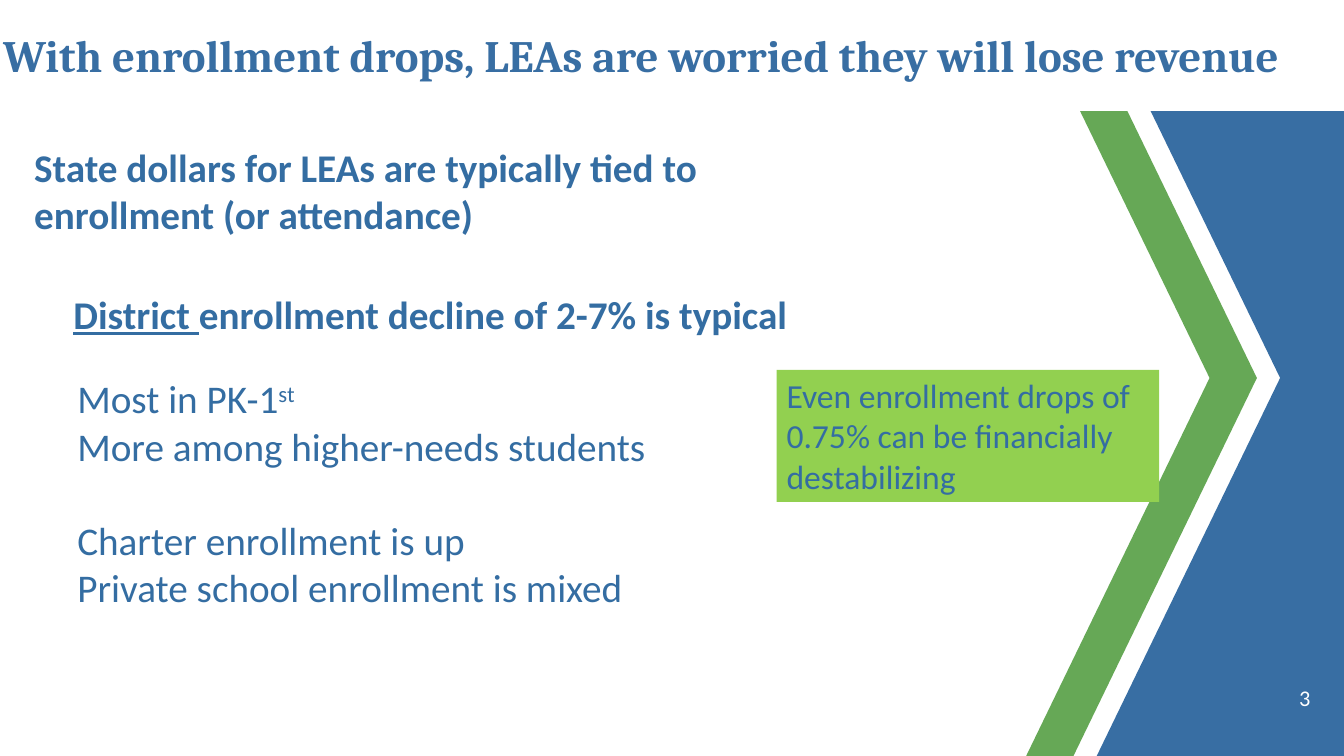
from lxml import etree
from pptx import Presentation
from pptx.dml.color import RGBColor
from pptx.enum.shapes import MSO_SHAPE
from pptx.enum.text import MSO_ANCHOR, MSO_AUTO_SIZE, PP_ALIGN
from pptx.oxml.ns import qn
from pptx.util import Pt

RECTANGLE = MSO_SHAPE.RECTANGLE
TOP, MIDDLE, BOTTOM = MSO_ANCHOR.TOP, MSO_ANCHOR.MIDDLE, MSO_ANCHOR.BOTTOM
LEFT, RIGHT = PP_ALIGN.LEFT, PP_ALIGN.RIGHT
NO_FIT = MSO_AUTO_SIZE.NONE
WHITE = RGBColor(0xFF, 0xFF, 0xFF)
GREEN = RGBColor(0x56, 0x9F, 0x44)
BLUE = RGBColor(0x38, 0x6E, 0xA3)
TEXT_BLUE = RGBColor(0x34, 0x6D, 0xA2)
LIME = RGBColor(0x92, 0xD0, 0x50)
WIDTH, HEIGHT = 960, 540


class SlideBuilder:
    """Holds the text style and the current slide, and draws its elements."""

    def __init__(self, page, font="Calibri", color=TEXT_BLUE, size=28):
        self.page = page
        self.font = font
        self.color = color
        self.size = size

    def band(self, points, color, opacity=100):
        corners = [(Pt(x), Pt(y)) for x, y in points]
        outline = self.page.shapes.build_freeform(*corners[0])
        outline.add_line_segments(corners[1:], close=True)
        shape = outline.convert_to_shape()
        self.paint(shape, color)
        if opacity < 100:
            tint = shape.element.spPr.find(f"{qn('a:solidFill')}/{qn('a:srgbClr')}")
            etree.SubElement(tint, qn("a:alpha"), val=str(opacity * 1000))

    def paint(self, shape, color):
        shape.shadow.inherit = False
        shape.fill.solid()
        shape.fill.fore_color.rgb = color
        shape.line.fill.background()

    def title(self, place, text):
        box = self.page.shapes.title
        self.page.shapes.element.append(box.element)
        box.left, box.top, box.width, box.height = map(Pt, place)
        box.fill.solid()
        box.fill.fore_color.rgb = WHITE
        self.frame(box, MIDDLE, 0)
        para = box.text_frame.paragraphs[0]
        para.alignment = LEFT
        self.span(para, text, size=32, font="Cambria", color=BLUE, bold=True)

    def frame(self, box, anchor, inset=None):
        frame = box.text_frame
        frame.word_wrap = True
        frame.auto_size = NO_FIT
        frame.vertical_anchor = anchor
        if inset is not None:
            frame.margin_left = frame.margin_right = Pt(inset)
            frame.margin_top = frame.margin_bottom = Pt(inset)

    def text(self, place, paras, fill=None, anchor=TOP, align=LEFT, inset=None, gaps=None):
        place = map(Pt, place)
        if fill is None:
            box = self.page.shapes.add_textbox(*place)
        else:
            box = self.page.shapes.add_shape(RECTANGLE, *place)
            self.paint(box, fill)
        self.frame(box, anchor, inset)
        for index, spans in enumerate(paras):
            frame = box.text_frame
            para = frame.add_paragraph() if index else frame.paragraphs[0]
            para.alignment = align
            if gaps and index in gaps:
                para.space_before = Pt(gaps[index])
            for words, style in spans:
                self.span(para, words, **style)

    def span(self, para, words, size=None, font=None, color=None, bold=False,
             underline=False, baseline=0):
        span = para.add_run()
        span.text = words
        span.font.name = font or self.font
        span.font.size = Pt(size or self.size)
        span.font.color.rgb = color or self.color
        span.font.bold = bold
        span.font.underline = underline
        if baseline:
            span._r.get_or_add_rPr().set("baseline", str(baseline * 1000))


def main():
    """Build the enrollment slide and save it."""
    deck = Presentation()
    deck.slide_width, deck.slide_height = Pt(WIDTH), Pt(HEIGHT)
    builder = SlideBuilder(deck.slides.add_slide(deck.slide_layouts[5]))
    middle = HEIGHT / 2

    builder.band([(766.8, 0), (733, 0), (864, middle), (733, HEIGHT),
                  (766.8, HEIGHT), (897.8, middle)], GREEN, 90)
    builder.band([(WIDTH, 0), (783.4, 0), (914.4, middle), (783.4, HEIGHT),
                  (WIDTH, HEIGHT)], BLUE)
    builder.text((864.7, 486, 71.3, 21.6), [[("3", {"size": 16, "color": WHITE})]],
                 anchor=BOTTOM, align=RIGHT, inset=0)
    builder.title((2.2, -1.4, 957.8, 80.6),
                  "With enrollment drops, LEAs are worried they will lose revenue")
    builder.text((48.2, 264.2, 506.9, 177.1), [
        [("Most in PK-1", {}), ("st", {"baseline": 30})],
        [("More among higher-needs students", {})],
        [("Charter enrollment is up", {})],
        [("Private school enrollment is mixed", {})],
    ], gaps={2: 34})
    builder.text((45.4, 203.8, 537.1, 41), [[
        ("District ", {"bold": True, "underline": True}),
        ("enrollment decline of 2-7% is typical", {"bold": True}),
    ]])
    builder.text((17.3, 98.6, 612.7, 74.9), [[
        ("State dollars for LEAs are typically tied to enrollment (or attendance)",
         {"bold": True}),
    ]], fill=WHITE)
    builder.text((554.7, 264.2, 273.3, 94.3), [[
        ("Even enrollment drops of 0.75% can be financially destabilizing", {"size": 24}),
    ]], fill=LIME)
    deck.save("out.pptx")


if __name__ == "__main__":
    main()
